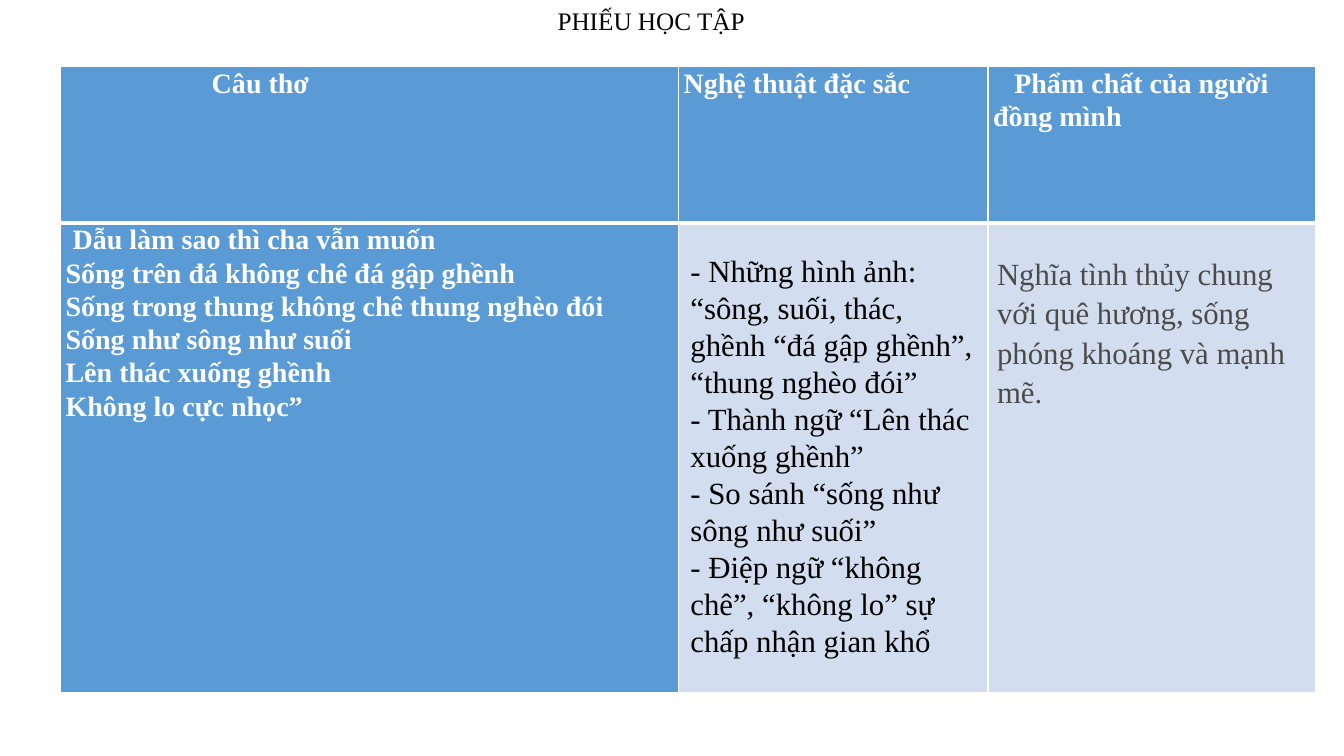
from lxml import etree
from pptx import Presentation
from pptx.dml.color import RGBColor
from pptx.enum import text
from pptx.oxml.ns import qn
from pptx.util import Emu, Pt

PX = 9144  # 100 px to the inch
FONT = "Times New Roman"
BLUE, PALE, WHITE = "5B9BD5", "D2DEEF", "FFFFFF"


def write(frame, lines, size, color, bold=False, spacing=None, first_indent=0):
    """Fill a text frame, one paragraph per line; only the first is indented."""
    frame.text = "\n".join(lines)
    for paragraph in frame.paragraphs:
        paragraph.alignment = text.PP_ALIGN.LEFT
        if spacing:
            paragraph.line_spacing = spacing
        for run in paragraph.runs:
            run.font.name, run.font.size, run.font.bold = FONT, Pt(size), bold
            run.font.color.rgb = RGBColor.from_string(color)
    if first_indent:
        frame.paragraphs[0]._p.get_or_add_pPr().set("indent", str(first_indent * PX))


def add_borders(cell, widths):
    properties = cell._tc.get_or_add_tcPr()
    for side, width in zip("LRTB", widths):
        line = etree.SubElement(properties, qn(f"a:ln{side}"), w=str(Pt(width)))
        fill = etree.SubElement(line, qn("a:solidFill"))
        etree.SubElement(fill, qn("a:srgbClr"), val=WHITE)


prs = Presentation()
prs.slide_width, prs.slide_height = Emu(1333 * PX), Emu(750 * PX)
slide = prs.slides.add_slide(prs.slide_layouts[5])

title = slide.shapes.title
title.left, title.top, title.width, title.height = [Emu(n * PX) for n in (543, 0, 208, 40)]
write(title.text_frame, ["PHIẾU HỌC TẬP"], 18, "000000")
title.text_frame.word_wrap = False
title.text_frame.auto_size = text.MSO_AUTO_SIZE.SHAPE_TO_FIT_TEXT
title.text_frame.vertical_anchor = text.MSO_ANCHOR.TOP

# Worksheet: each cell holds its lines and the indent of the first one
verse = [
    "Dẫu làm sao thì cha vẫn muốn",
    "Sống trên đá không chê đá gập ghềnh",
    "Sống trong thung không chê thung nghèo đói",
    "Sống như sông như suối",
    "Lên thác xuống ghềnh",
    "Không lo cực nhọc”",
]
rows = [
    [(["Câu thơ"], 145), (["Nghệ thuật đặc sắc"], 0),
     (["Phẩm chất của người đồng mình"], 21)],
    [(verse, 7), ([], 0), ([], 0)],
]
worksheet = slide.shapes.add_table(2, 3, *[Emu(n * PX) for n in (60, 66, 1245, 621)]).table
for column, width in zip(worksheet.columns, (613, 307, 325)):
    column.width = Emu(width * PX)
for row, height in zip(worksheet.rows, (155, 466)):
    row.height = Emu(height * PX)
for r, row in enumerate(rows):
    for c, (lines, indent) in enumerate(row):
        cell = worksheet.cell(r, c)
        add_borders(cell, (1, 1, 1, 3) if r == 0 else (1, 1, 3, 1))
        cell.fill.solid()
        cell.fill.fore_color.rgb = RGBColor.from_string(BLUE if lines else PALE)
        if lines:
            cell.margin_left = cell.margin_right = Emu(5 * PX)
            cell.margin_top = cell.margin_bottom = 0
            write(cell.text_frame, lines, 20, WHITE, True, 1.07, indent)

# Answers laid over the two pale cells
techniques = [
    "- Những hình ảnh: “sông, suối, thác, ghềnh “đá gập ghềnh”, “thung nghèo đói”",
    "- Thành ngữ “Lên thác xuống ghềnh”",
    "- So sánh “sống như sông như suối”",
    "- Điệp ngữ “không chê”, “không lo” sự chấp nhận gian khổ",
]
qualities = ["Nghĩa tình thủy chung với quê hương, sống phóng khoáng và mạnh mẽ."]
answers = [
    ((675, 245, 304, 417), techniques, "000000", None),
    ((979, 245, 331, 208), qualities, "4C4B4B", 1.07),
]
for box, lines, color, spacing in answers:
    answer = slide.shapes.add_textbox(*[Emu(n * PX) for n in box]).text_frame
    answer.word_wrap = True
    answer.auto_size = text.MSO_AUTO_SIZE.SHAPE_TO_FIT_TEXT
    write(answer, lines, 22, color, spacing=spacing)

prs.save("out.pptx")
